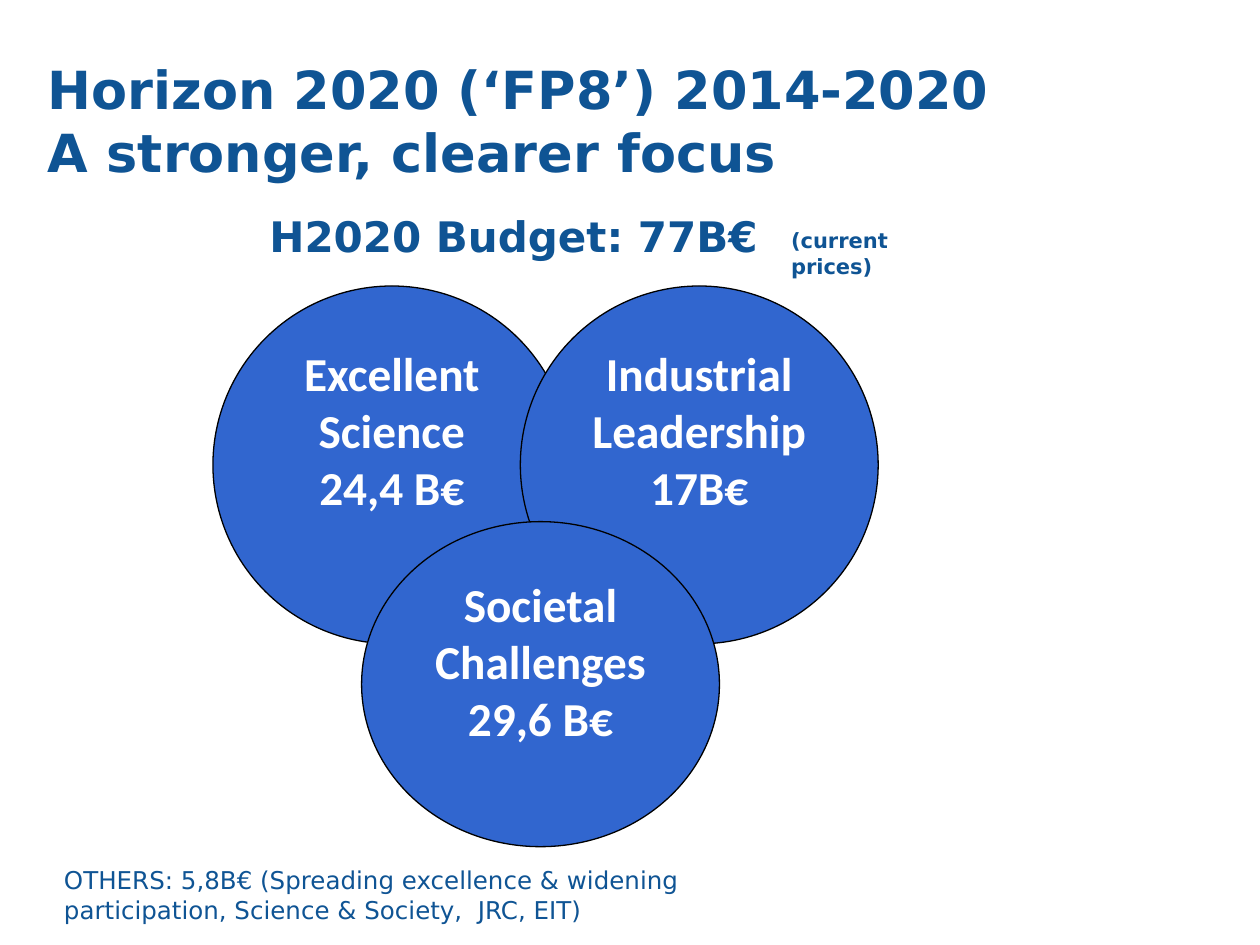
from dataclasses import dataclass

import pptx
import pptx.dml.color
import pptx.enum.shapes
import pptx.enum.text
import pptx.util

Inches = pptx.util.Inches
Pt = pptx.util.Pt
RGB = pptx.dml.color.RGBColor
ALIGN = pptx.enum.text.PP_ALIGN
ANCHOR = pptx.enum.text.MSO_ANCHOR


@dataclass(frozen=True)
class Theme:
    heading_font: str = "DejaVu Sans"
    circle_font: str = "Calibri"
    navy: RGB = RGB(0x0F, 0x54, 0x94)
    blue: RGB = RGB(0x31, 0x66, 0xCF)
    white: RGB = RGB(0xFF, 0xFF, 0xFF)
    black: RGB = RGB(0, 0, 0)
    title_size: int = 30
    circle_size: int = 27
    budget_size: int = 24
    others_size: int = 14
    note_size: int = 12


@dataclass(frozen=True)
class Box:
    left: float
    top: float
    width: float
    height: float

    def emu(self) -> tuple:
        return tuple(Inches(v) for v in (self.left, self.top, self.width, self.height))


@dataclass(frozen=True)
class Pillar:
    box: Box
    text: str


@dataclass(frozen=True)
class Label:
    box: Box
    text: str
    size: int
    bold: bool = True


THEME = Theme()
PILLARS = [
    Pillar(Box(1.69, 2.27, 2.84, 2.84), "Excellent\nScience\n24,4 B€"),
    Pillar(Box(4.13, 2.27, 2.84, 2.84), "Industrial\nLeadership\n17B€"),
    Pillar(Box(2.87, 4.14, 2.84, 2.58), "Societal\nChallenges\n29,6 B€"),
]
LABELS = [
    Label(Box(2.04, 1.62, 4.14, 0.5), "H2020 Budget: 77B€", THEME.budget_size),
    Label(Box(6.18, 1.76, 1.53, 0.3), "(current prices)", THEME.note_size),
    Label(
        Box(0.41, 6.82, 6.4, 0.57),
        "OTHERS: 5,8B€ (Spreading excellence & widening participation, "
        "Science & Society,  JRC, EIT)",
        THEME.others_size,
        bold=False,
    ),
]


def write(tf, text: str, font: str, size: int, color: RGB, bold: bool, align: ALIGN) -> None:
    tf.word_wrap = True
    tf.text = text
    for p in tf.paragraphs:
        p.alignment = align
        p.font.name = font
        p.font.size = Pt(size)
        p.font.bold = bold
        p.font.color.rgb = color


def fill_title(sp, box: Box, text: str) -> None:
    sp.left, sp.top, sp.width, sp.height = box.emu()
    tf = sp.text_frame
    write(tf, text, THEME.heading_font, THEME.title_size, THEME.navy, True, ALIGN.LEFT)
    tf.auto_size = pptx.enum.text.MSO_AUTO_SIZE.NONE
    tf.vertical_anchor = ANCHOR.MIDDLE


def draw_pillar(slide, pillar: Pillar) -> None:
    sp = slide.shapes.add_shape(pptx.enum.shapes.MSO_SHAPE.OVAL, *pillar.box.emu())
    sp.shadow.inherit = False
    sp.fill.solid()
    sp.fill.fore_color.rgb = THEME.blue
    sp.line.color.rgb = THEME.black
    sp.line.width = Pt(0.75)
    tf = sp.text_frame
    tf.vertical_anchor = ANCHOR.TOP
    write(tf, pillar.text, THEME.circle_font, THEME.circle_size, THEME.white, True, ALIGN.CENTER)


def draw_label(slide, label: Label) -> None:
    sp = slide.shapes.add_textbox(*label.box.emu())
    write(sp.text_frame, label.text, THEME.heading_font, label.size, THEME.navy,
          label.bold, ALIGN.LEFT)


def main() -> None:
    prs = pptx.Presentation()
    prs.slide_width, prs.slide_height = Inches(10), Inches(7.5)
    slide = prs.slides.add_slide(prs.slide_layouts.get_by_name("Title Only"))
    # A vertical tab is a line break within the title paragraph.
    fill_title(slide.shapes.title, Box(0.28, 0.44, 9.53, 1.02),
               "Horizon 2020 (‘FP8’) 2014-2020\vA stronger, clearer focus")
    for pillar in PILLARS:
        draw_pillar(slide, pillar)
    for label in LABELS:
        draw_label(slide, label)
    prs.save("out.pptx")


if __name__ == "__main__":
    main()
